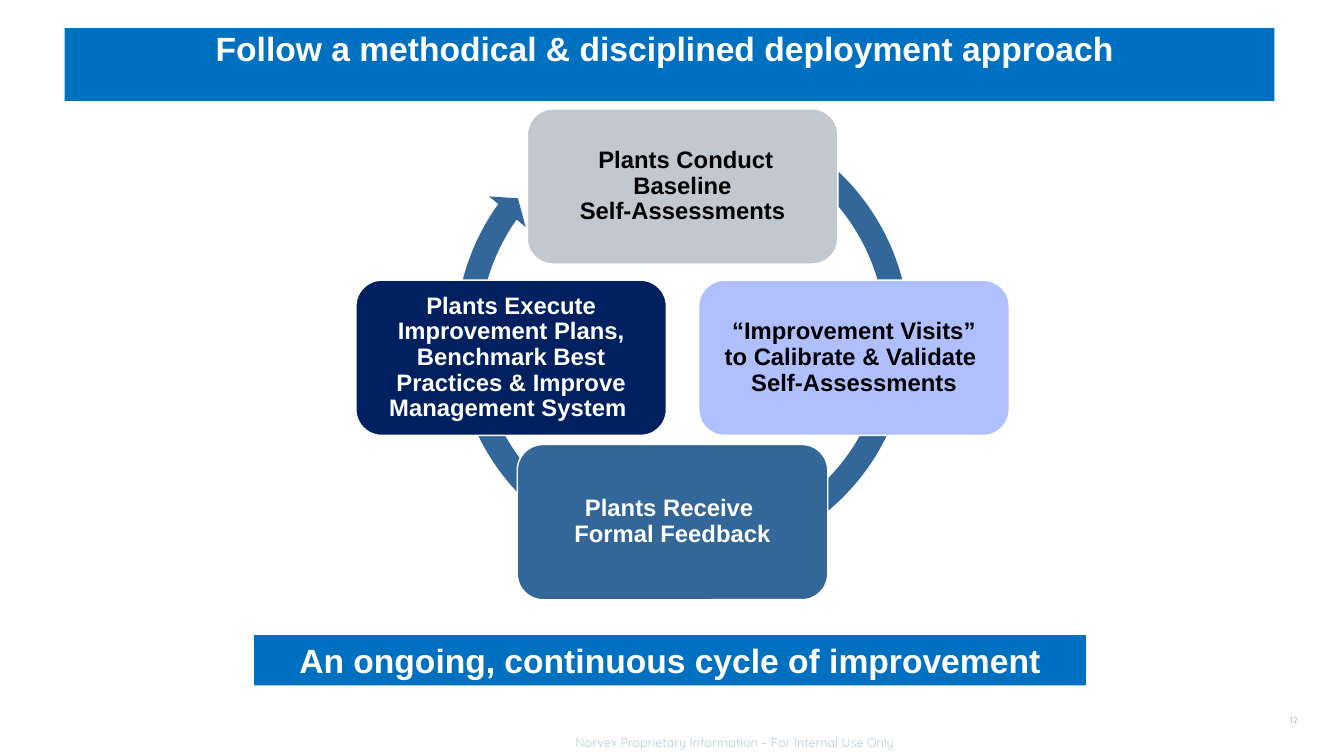
from pptx import Presentation
from pptx.dml.color import RGBColor
from pptx.enum.shapes import MSO_SHAPE
from pptx.enum.text import MSO_ANCHOR, PP_ALIGN
from pptx.util import Inches, Pt

RECT, ROUNDED = MSO_SHAPE.RECTANGLE, MSO_SHAPE.ROUNDED_RECTANGLE
CIRCULAR_ARROW = MSO_SHAPE.CIRCULAR_ARROW
CENTER, RIGHT = PP_ALIGN.CENTER, PP_ALIGN.RIGHT
TOP, MIDDLE = MSO_ANCHOR.TOP, MSO_ANCHOR.MIDDLE

COLORS = {
    "white": "FFFFFF", "black": "000000", "banner": "0070C0", "steel": "336699",
    "gray": "C1C8CE", "lilac": "B0C0FF", "navy": "002060",
    "number": "98A4AE", "footer": "B7C9D3",
}
STEP_SIZE = (3.08, 1.54)
STEPS = [
    (5.23, 1.08, "gray", "black", [" Plants Conduct", "Baseline\nSelf-Assessments"]),
    (6.93, 2.78, "lilac", "black",
     ["“Improvement Visits” to Calibrate & Validate \nSelf-Assessments"]),
    (5.13, 4.41, "steel", "white", ["Plants Receive \nFormal Feedback"]),
    (3.53, 2.78, "navy", "white",
     ["Plants Execute Improvement Plans,\n"
      "Benchmark Best Practices & Improve Management System "]),
]


class CycleSlide:
    """Draws the styled elements of one slide."""

    def __init__(self, slide):
        self.shapes = slide.shapes

    def color(self, name):
        return RGBColor.from_string(COLORS[name])

    def shape(self, kind, box, fill, line=None):
        s = self.shapes.add_shape(kind, *map(Inches, box))
        s.shadow.inherit = False
        s.fill.solid()
        s.fill.fore_color.rgb = self.color(fill)
        if line:
            s.line.color.rgb = self.color(line)
            s.line.width = Pt(1)
        else:
            s.line.fill.background()
        return s

    def add_text(self, s, paragraphs, size, color, font="Arial", bold=True,
                 align=CENTER, anchor=TOP, insets=(0.1, 0.05), spacing=None):
        tf = s.text_frame
        tf.word_wrap = True
        tf.vertical_anchor = anchor
        tf.margin_left = tf.margin_right = Inches(insets[0])
        tf.margin_top = tf.margin_bottom = Inches(insets[1])
        for i, text in enumerate(paragraphs):
            p = tf.add_paragraph() if i else tf.paragraphs[0]
            p.alignment = align
            p.line_spacing = spacing
            for j, line in enumerate(text.split("\n")):
                if j:
                    p.add_line_break()
                r = p.add_run()
                r.text = line
                r.font.name, r.font.size, r.font.bold = font, Pt(size), bold
                r.font.color.rgb = self.color(color)

    def banner(self, box, text, **style):
        s = self.shape(RECT, box, "banner")
        self.add_text(s, [text], 24, "white", **style)

    def cycle_arrow(self, box, adjustments):
        s = self.shape(CIRCULAR_ARROW, box, "steel")
        for i, value in enumerate(adjustments):
            s.adjustments[i] = value

    def step(self, left, top, fill, color, paragraphs):
        s = self.shape(ROUNDED, (left, top, *STEP_SIZE), fill, "white")
        self.add_text(s, paragraphs, 17, color, anchor=MIDDLE,
                      insets=(0.14, 0.14), spacing=0.9)

    def label(self, box, text, size, color, align=CENTER):
        sp = self.shapes.add_textbox(*map(Inches, box))
        self.add_text(sp, [text], size, color, "Quicksand", False, align)


def main():
    prs = Presentation()
    prs.slide_width, prs.slide_height = Inches(13.33), Inches(7.5)
    slide = CycleSlide(prs.slides.add_slide(prs.slide_layouts[6]))
    slide.label((12.46, 7.05, 0.51, 0.2), "12", 6, "number", RIGHT)
    slide.banner((0.64, 0.28, 12, 0.72),
                 "Follow a methodical & disciplined deployment approach ",
                 insets=(0, 0))
    slide.cycle_arrow((4.4, 0.97, 4.74, 4.74), (0.05, 2.73, 129.3, 179.64, 0.05))
    for step in STEPS:
        slide.step(*step)
    slide.banner((2.52, 6.3, 8.25, 0.5),
                 "An ongoing, continuous cycle of improvement", anchor=MIDDLE)
    slide.label((5.55, 7.24, 3.47, 0.25),
                "Norvex Proprietary Information – For Internal Use Only", 9, "footer")
    prs.save("out.pptx")


if __name__ == "__main__":
    main()
